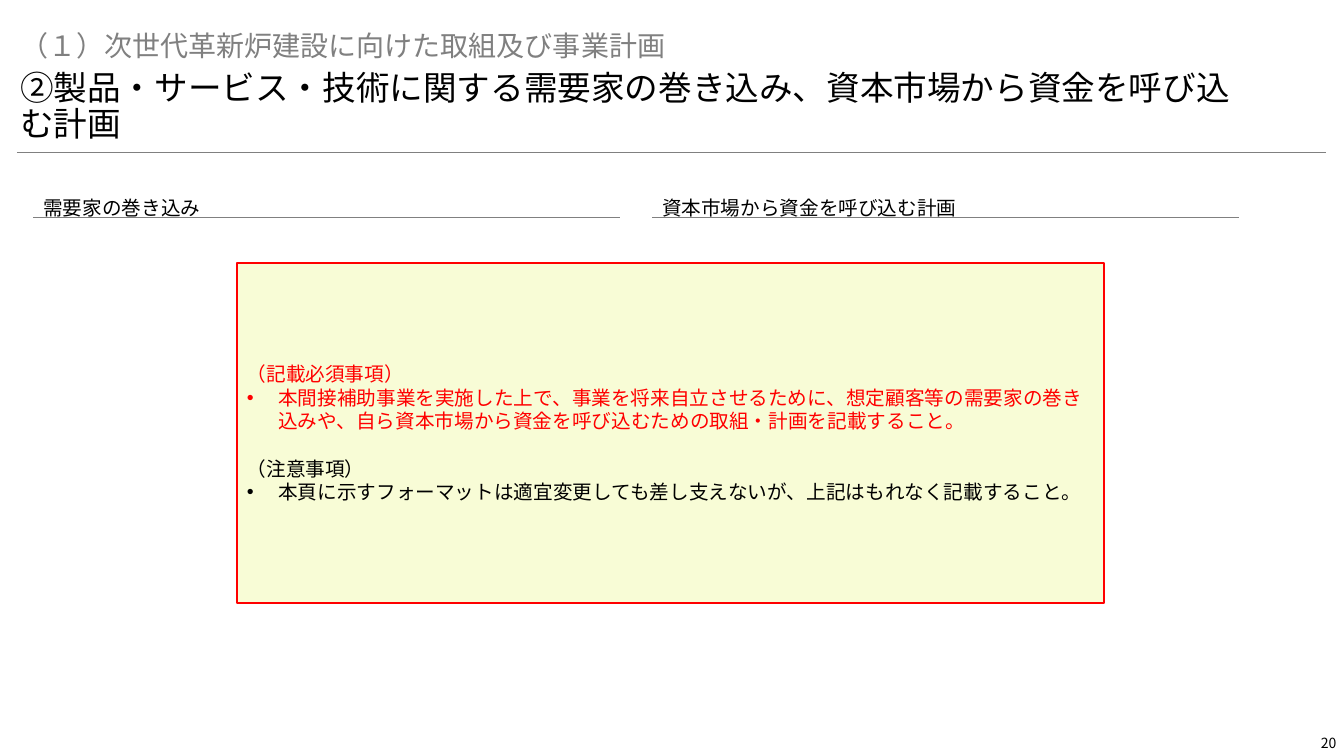
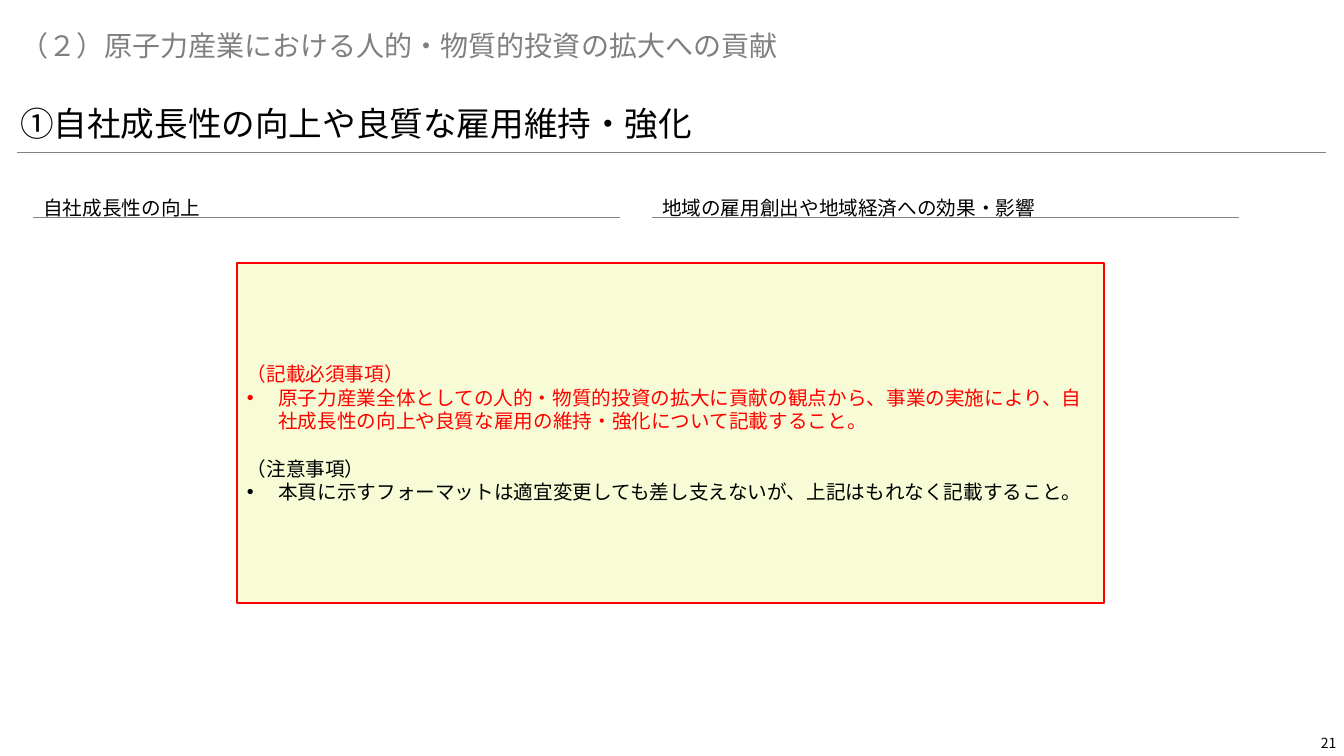
from dataclasses import dataclass

from lxml.etree import SubElement
from pptx import Presentation
from pptx.dml.color import RGBColor
from pptx.enum.lang import MSO_LANGUAGE_ID
from pptx.enum.shapes import MSO_CONNECTOR, MSO_SHAPE
from pptx.enum.text import MSO_ANCHOR, PP_ALIGN
from pptx.oxml.ns import qn
from pptx.util import Pt


@dataclass(frozen=True)
class Theme:
    font: str = "Noto Sans CJK JP"
    black: RGBColor = RGBColor(0x00, 0x00, 0x00)
    gray: RGBColor = RGBColor(0x80, 0x80, 0x80)
    red: RGBColor = RGBColor(0xFF, 0x00, 0x00)
    cream: RGBColor = RGBColor(0xF8, 0xFC, 0xD6)
    title_size: int = 24
    section_size: int = 20
    body_size: int = 14
    number_size: int = 10


THEME = Theme()

# Column grid
COLUMN_LEFT = 23.8
COLUMN_PITCH = 442
COLUMN_WIDTH = 419

BULLET_INDENT = 22.5
FIRST_PAGE = 20
FORMAT_NOTE = "本頁に示すフォーマットは適宜変更しても差し支えないが、上記はもれなく記載すること。"

# Section, title, column headings, required content
PAGES = [
    (
        "（１）次世代革新炉建設に向けた取組及び事業計画",
        "②製品・サービス・技術に関する需要家の巻き込み、資本市場から資金を呼び込む計画",
        ["需要家の巻き込み", "資本市場から資金を呼び込む計画"],
        "本間接補助事業を実施した上で、事業を将来自立させるために、想定顧客等の需要家の巻き込みや、"
        "自ら資本市場から資金を呼び込むための取組・計画を記載すること。",
    ),
    (
        "（２）原子力産業における人的・物質的投資の拡大への貢献",
        "①自社成長性の向上や良質な雇用維持・強化",
        ["自社成長性の向上", "地域の雇用創出や地域経済への効果・影響"],
        "原子力産業全体としての人的・物質的投資の拡大に貢献の観点から、事業の実施により、"
        "自社成長性の向上や良質な雇用の維持・強化について記載すること。",
    ),
]


def format_runs(paragraph, size, color):
    for run in paragraph.runs:
        run.font.size = Pt(size)
        run.font.color.rgb = color
        run.font.name = THEME.font
        run.font.language_id = MSO_LANGUAGE_ID.JAPANESE
        east_asian = SubElement(run.font._element, qn("a:ea"))
        east_asian.set("typeface", THEME.font)


def add_bullet(paragraph):
    properties = paragraph._p.get_or_add_pPr()
    properties.set("marL", str(Pt(BULLET_INDENT)))
    properties.set("indent", str(-Pt(BULLET_INDENT)))
    SubElement(properties, qn("a:buFont")).set("typeface", "Arial")
    SubElement(properties, qn("a:buChar")).set("char", "•")


def add_text(slide, box, text, size, color=THEME.black, anchor=MSO_ANCHOR.TOP, inset=True):
    shape = slide.shapes.add_textbox(*map(Pt, box))
    frame = shape.text_frame
    frame.word_wrap = True
    frame.vertical_anchor = anchor
    if not inset:
        frame.margin_left = frame.margin_right = 0
        frame.margin_top = frame.margin_bottom = 0
    frame.text = text
    paragraph = frame.paragraphs[0]
    format_runs(paragraph, size, color)
    return paragraph


def add_rule(slide, left, right, top, width):
    rule = slide.shapes.add_connector(
        MSO_CONNECTOR.STRAIGHT, Pt(left), Pt(top), Pt(right), Pt(top)
    )
    rule.line.color.rgb = THEME.gray
    rule.line.width = Pt(width)
    SubElement(rule._element.spPr, qn("a:effectLst"))


def add_page_frame(slide, section, title, number):
    # Section name and title above the full-width rule
    section_line = add_text(slide, (14.4, 23, 850, 22), section,
                            THEME.section_size, THEME.gray, inset=False)
    title_line = add_text(slide, (14.4, 43, 885.6, 60), title, THEME.title_size,
                          anchor=MSO_ANCHOR.BOTTOM, inset=False)
    for paragraph in (section_line, title_line):
        paragraph.line_spacing = 0.9
    add_rule(slide, 12, 947.5, 109, 1)

    # Page number
    page_number = add_text(slide, (924.5, 521, 30, 16), str(number), THEME.number_size,
                           anchor=MSO_ANCHOR.BOTTOM, inset=False)
    page_number.alignment = PP_ALIGN.RIGHT


def add_column_headings(slide, headings):
    for index, heading in enumerate(headings):
        left = COLUMN_LEFT + index * COLUMN_PITCH
        add_text(slide, (left, 136, COLUMN_WIDTH, 24), heading, THEME.body_size,
                 anchor=MSO_ANCHOR.MIDDLE)
        add_rule(slide, left, left + COLUMN_WIDTH, 155.5, 0.75)


def add_instructions(slide, groups):
    shape = slide.shapes.add_shape(
        MSO_SHAPE.RECTANGLE, Pt(169.2), Pt(188), Pt(619.2), Pt(242.6)
    )
    shape.shadow.inherit = False
    shape.fill.solid()
    shape.fill.fore_color.rgb = THEME.cream
    shape.line.color.rgb = THEME.red
    shape.line.width = Pt(1.5)

    frame = shape.text_frame
    frame.word_wrap = True
    frame.vertical_anchor = MSO_ANCHOR.MIDDLE
    for index, (heading, item, color) in enumerate(groups):
        if index == 0:
            heading_line = frame.paragraphs[0]
        else:
            heading_line = frame.add_paragraph()
            heading_line.space_before = Pt(17)
        item_line = frame.add_paragraph()
        add_bullet(item_line)
        for paragraph, text in ((heading_line, heading), (item_line, item)):
            paragraph.text = text
            paragraph.alignment = PP_ALIGN.LEFT
            format_runs(paragraph, THEME.body_size, color)


def main():
    presentation = Presentation()
    presentation.slide_width = Pt(960)
    presentation.slide_height = Pt(540)
    blank_layout = presentation.slide_layouts[6]

    for number, (section, title, headings, requirement) in enumerate(PAGES, FIRST_PAGE):
        slide = presentation.slides.add_slide(blank_layout)
        add_page_frame(slide, section, title, number)
        add_column_headings(slide, headings)
        add_instructions(slide, [
            ("（記載必須事項）", requirement, THEME.red),
            ("（注意事項）", FORMAT_NOTE, THEME.black),
        ])

    presentation.save("out.pptx")


if __name__ == "__main__":
    main()
